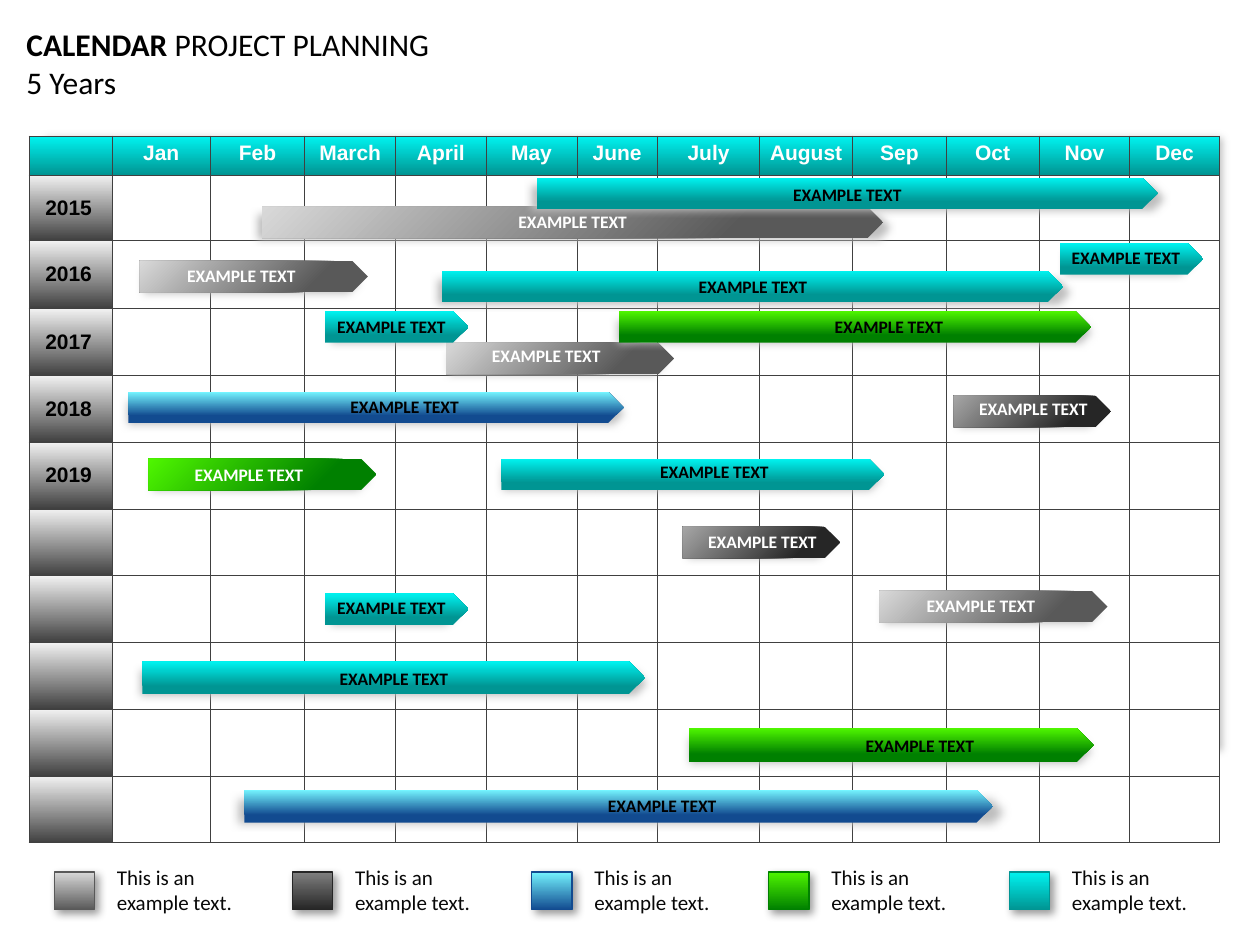
from lxml import etree
from pptx import Presentation
from pptx import util as u
from pptx.dml.color import RGBColor
from pptx.enum import shapes, text
from pptx.oxml.ns import qn

SILVER, DARK, CHARCOAL = ("595959", "D9D9D9"), ("262626", "A6A6A6"), ("262626", "808080")
BLUE, GREEN, TEAL = ("124B90", "74F4FF"), ("008000", "4FF600"), ("009593", "00F3F0")
STEEL = ("404040", "F2F2F2")
UP, UP_LEFT = 90, 135

MONTHS = ["Jan", "Feb", "March", "April", "May", "June", "July",
          "August", "Sep", "Oct", "Nov", "Dec"]
YEARS = ["2015", "2016", "2017", "2018", "2019"]
COLUMN_WIDTHS = [0.66, 0.78, 0.75, 0.72, 0.72, 0.72, 0.64, 0.81, 0.74, 0.74, 0.74, 0.72, 0.71]
ROW_HEIGHTS = [0.31, 0.52, 0.54] + [0.53] * 8

# fmt: off
BARS = [
    ((1.11, 2.07, 1.81, 0.25), SILVER, UP_LEFT, (1.38, 2.05, 1.07)),
    ((2.08, 1.64, 4.93, 0.25), SILVER, UP_LEFT, (3.08, 1.62, 2.93)),
    ((3.54, 2.72, 1.81, 0.25), SILVER, UP_LEFT, (3.8, 2.69, 1.07)),
    ((3.51, 2.15, 4.93, 0.25), TEAL, UP, (4.51, 2.14, 2.93)),
    ((2.58, 2.47, 1.14, 0.25), TEAL, UP, (2.57, 2.46, 1.07)),
    ((4.26, 1.41, 4.93, 0.25), TEAL, UP, (5.26, 1.41, 2.93)),
    ((4.91, 2.47, 3.75, 0.25), GREEN, UP, (5.94, 2.46, 2.23)),
    ((8.41, 1.93, 1.14, 0.25), TEAL, UP, (8.4, 1.91, 1.07)),
    ((1.02, 3.11, 3.93, 0.25), BLUE, UP, (2.04, 3.09, 2.34)),
    ((3.98, 3.64, 3.04, 0.25), TEAL, UP, (4.77, 3.61, 1.8)),
    ((7.57, 3.14, 1.25, 0.25), DARK, UP_LEFT, (7.64, 3.11, 1.12)),
    ((1.18, 3.64, 1.81, 0.25), GREEN, UP_LEFT, (1.44, 3.63, 1.07)),
    ((1.13, 5.25, 3.99, 0.26), TEAL, UP, (1.94, 5.25, 2.37)),
    ((5.42, 4.18, 1.25, 0.25), DARK, UP_LEFT, (5.49, 4.16, 1.12)),
    ((5.47, 5.78, 3.21, 0.27), GREEN, UP, (6.35, 5.78, 1.9)),
    ((1.94, 6.27, 5.94, 0.26), BLUE, UP, (3.49, 6.26, 3.53)),
    ((6.98, 4.69, 1.81, 0.25), SILVER, UP_LEFT, (7.25, 4.67, 1.07)),
    ((2.58, 4.71, 1.14, 0.25), TEAL, UP, (2.57, 4.69, 1.07)),
]
# fmt: on
LEGEND = [(0.43, SILVER), (2.32, CHARCOAL), (4.22, BLUE), (6.1, GREEN), (8.01, TEAL)]


def color(value):
    return RGBColor.from_string(value)


def inches(box):
    return [u.Inches(length) for length in box]


def fill_gradient(fill, tone, angle, start=0):
    fill.gradient()
    fill.gradient_angle = angle
    for stop, shade, position in zip(fill.gradient_stops, tone, (start, 1)):
        stop.color.rgb = color(shade)
        stop.position = position


def add_plain_shape(parent, kind, box):
    shape = parent.add_shape(kind, *inches(box))
    shape.shadow.inherit = False
    shape.line.fill.background()
    return shape


def add_effect(shape, name, **attributes):
    effects = shape._element.spPr.find(qn("a:effectLst"))
    return etree.SubElement(effects, qn(name), **attributes)


def add_soft_shade(parent, kind, box):
    shade = add_plain_shape(parent, kind, box)
    shade.fill.solid()
    shade.fill.fore_color.rgb = color("BFBFBF")
    add_effect(shade, "a:softEdge", rad=str(u.Pt(5)))


def format_span(span, size, shade, bold=False, name="Calibri"):
    span.font.size = u.Pt(size)
    span.font.name = name
    span.font.bold = bold
    span.font.color.rgb = color(shade)


def add_text(parent, box, content, size, shade, bold=False, align=None, anchor=None):
    label = parent.add_textbox(*inches(box))
    frame = label.text_frame
    frame.word_wrap = True
    frame.vertical_anchor = anchor
    frame.text = content
    for para in frame.paragraphs:
        para.alignment = align
        for span in para.runs:
            format_span(span, size, shade, bold)
    return frame


def add_title(page, box):
    frame = add_text(page.shapes, box, "CALENDAR\n5 Years", 18, "000000",
                     anchor=text.MSO_ANCHOR.MIDDLE)
    frame.margin_left = frame.margin_right = 0
    heading = frame.paragraphs[0]
    heading.runs[0].font.bold = True
    span = heading.add_run()
    span.text = " PROJECT PLANNING"
    format_span(span, 18, "000000")


def add_borders(cell):
    properties = cell._tc.get_or_add_tcPr()
    for side in ("a:lnL", "a:lnR", "a:lnT", "a:lnB"):
        line = etree.SubElement(properties, qn(side), w=str(u.Pt(0.5)))
        solid = etree.SubElement(line, qn("a:solidFill"))
        etree.SubElement(solid, qn("a:srgbClr"), val="404040")


def format_cell(cell, content, margins, shade, align):
    cell.vertical_anchor = text.MSO_ANCHOR.MIDDLE
    if not content:
        margins = (0, 0, 0, 0)
    cell.margin_left, cell.margin_top, cell.margin_right, cell.margin_bottom = inches(margins)
    if content:
        cell.text_frame.text = content
        para = cell.text_frame.paragraphs[0]
        para.alignment = align
        format_span(para.runs[0], 12, shade, True, "Arial")


def add_calendar(page, box):
    add_soft_shade(page.shapes, shapes.MSO_SHAPE.RECTANGLE, (0.27, 1.01, 9.52, 5.04))
    table = page.shapes.add_table(len(ROW_HEIGHTS), len(COLUMN_WIDTHS), *inches(box)).table
    table.first_row = table.horz_banding = False
    for column, width in zip(table.columns, COLUMN_WIDTHS):
        column.width = u.Inches(width)
    for row, height in zip(table.rows, ROW_HEIGHTS):
        row.height = u.Inches(height)
    headings = [""] + MONTHS
    years = [""] + YEARS + [""] * (len(ROW_HEIGHTS) - len(YEARS) - 1)
    for row_index, year in enumerate(years):
        for column_index, month in enumerate(headings):
            cell = table.cell(row_index, column_index)
            add_borders(cell)
            if row_index == 0:
                format_cell(cell, month, (0.04, 0, 0.04, 0.04), "FFFFFF", text.PP_ALIGN.CENTER)
                fill_gradient(cell.fill, TEAL, UP)
            elif column_index == 0:
                format_cell(cell, year, (0.06, 0, 0.16, 0), "000000", text.PP_ALIGN.RIGHT)
                fill_gradient(cell.fill, STEEL, UP)
            else:
                cell.fill.solid()
                cell.fill.fore_color.rgb = color("FFFFFF")


def add_bar(page, box, tone, angle, label):
    left, top, width, height = box
    group = page.shapes.add_group_shape().shapes
    plate = shapes.MSO_SHAPE.PENTAGON
    add_soft_shade(group, plate, (left - 0.019 * width, top + 0.01, 1.053 * width, height + 0.06))
    bar = add_plain_shape(group, plate, box)
    fill_gradient(bar.fill, tone, angle, 0.24)
    add_text(group, (*label, 0.27), "EXAMPLE TEXT", 10,
             "FFFFFF" if angle == UP_LEFT else "000000", True,
             text.PP_ALIGN.CENTER, text.MSO_ANCHOR.MIDDLE)


def add_legend_entry(page, left, top, tone):
    group = page.shapes.add_group_shape().shapes
    swatch = add_plain_shape(group, shapes.MSO_SHAPE.RECTANGLE, (left, top + 0.11, 0.32, 0.3))
    fill_gradient(swatch.fill, tone, UP)
    swatch.line.color.rgb = color(tone[0])
    swatch.line.width = u.Pt(0.75)
    shadow = add_effect(swatch, "a:outerShdw", blurRad=str(u.Pt(5)), dist=str(u.Pt(3)),
                        dir="2700000", algn="tl", rotWithShape="0")
    black = etree.SubElement(shadow, qn("a:srgbClr"), val="000000")
    etree.SubElement(black, qn("a:alpha"), val="40000")
    add_text(group, (left + 0.4, top, 1.17, 0.51), "This is an example text.", 12, "080808")


def main():
    deck = Presentation()
    deck.slide_width, deck.slide_height = u.Inches(10), u.Inches(7.5)
    page = deck.slides.add_slide(deck.slide_layouts[6])
    add_calendar(page, (0.23, 1.08, 9.45, 5.61))
    add_title(page, (0.21, 0.17, 4.41, 0.66))
    for bar in BARS:
        add_bar(page, *bar)
    for left, tone in LEGEND:
        add_legend_entry(page, left, 6.81, tone)
    deck.save("out.pptx")


if __name__ == "__main__":
    main()
